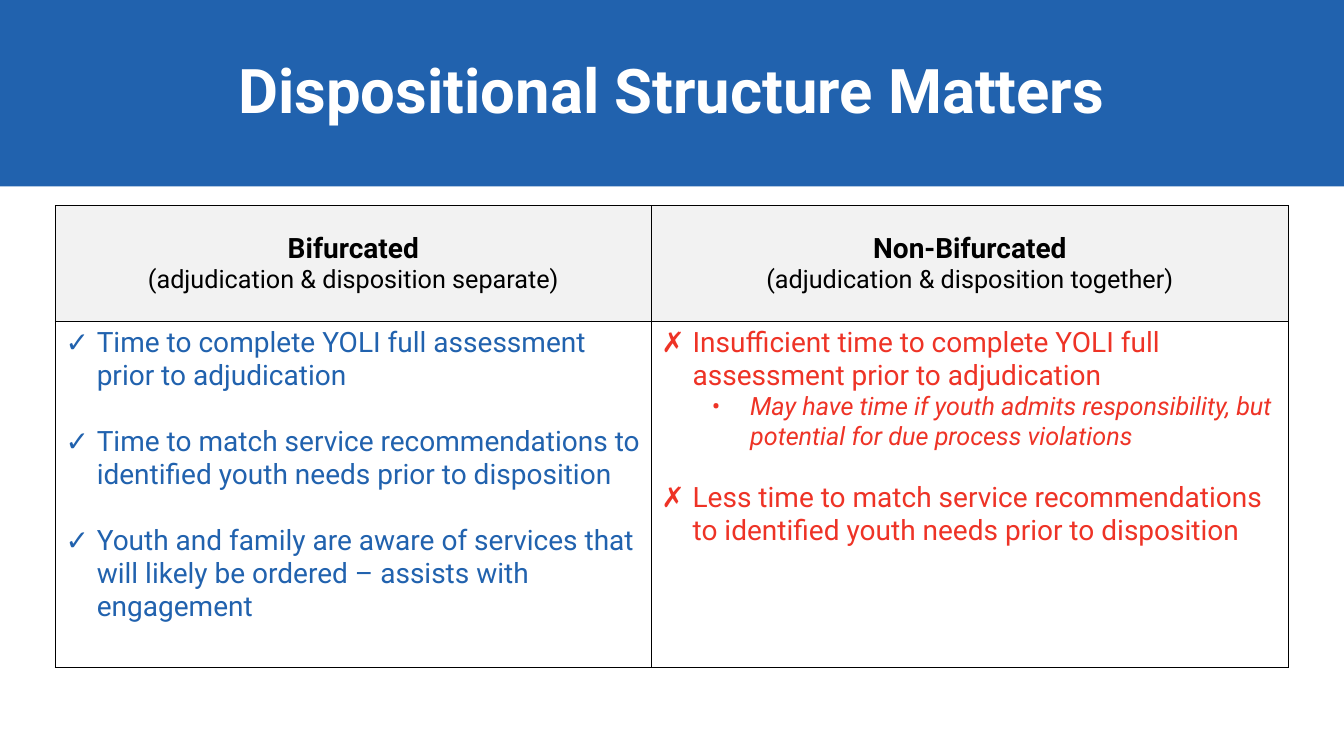
from dataclasses import dataclass

from lxml.etree import SubElement
from pptx import Presentation
from pptx.dml.color import RGBColor
from pptx.enum.shapes import MSO_SHAPE as Shape
from pptx.enum.text import MSO_ANCHOR as Anchor, PP_ALIGN as Align
from pptx.oxml.ns import qn
from pptx.util import Inches, Pt

BLUE, RED, BLACK, WHITE, GREY = "2162AE", "EE3326", "000000", "FFFFFF", "F2F2F2"
FONT = "Roboto"


@dataclass(frozen=True)
class Line:
    """One paragraph; a bullet makes it a hanging list item."""
    text: str
    size: int = 20
    bold: bool = False
    italic: bool = False
    bullet: str = ""
    indent: float = 0.31
    hanging: float = 0.31
    level: int = 0
    gap: float = 0


@dataclass(frozen=True)
class Column:
    width: float
    color: str
    heading: list[Line]
    points: list[Line]


COLUMNS = [
    Column(5.91, BLUE, [
        Line("Bifurcated", bold=True),
        Line("(adjudication & disposition separate)", 18),
    ], [
        Line("Time to complete YOLI full assessment prior to adjudication", bullet="✓"),
        Line("Time to match service recommendations to identified youth needs "
             "prior to disposition", bullet="✓", gap=23.5),
        Line("Youth and family are aware of services that will likely be ordered "
             "– assists with engagement", bullet="✓", gap=23.5),
    ]),
    Column(6.32, RED, [
        Line("Non-Bifurcated", bold=True),
        Line("(adjudication & disposition together)", 18),
    ], [
        Line("Insufficient time to complete YOLI full assessment prior to adjudication",
             bullet="✗"),
        Line("May have time if youth admits responsibility, but potential for due "
             "process violations", 18, italic=True, bullet="•",
             indent=0.88, hanging=0.38, level=1),
        Line("Less time to match service recommendations to identified youth needs "
             "prior to disposition", bullet="✗", gap=21.5),
    ]),
]
ROW_HEIGHTS = [1.15, 3.43]


def rgb(color: str) -> RGBColor:
    return RGBColor.from_string(color)


def write_lines(frame, lines: list[Line], color: str, align: Align) -> None:
    frame.word_wrap = True
    for index, line in enumerate(lines):
        paragraph = frame.add_paragraph() if index else frame.paragraphs[0]
        if line.bullet:
            props = paragraph._p.get_or_add_pPr()
            props.set("marL", str(Inches(line.indent)))
            props.set("indent", str(-Inches(line.hanging)))
            SubElement(props, qn("a:buFont"), typeface=FONT)
            SubElement(props, qn("a:buChar"), char=line.bullet)
        paragraph.alignment = align
        paragraph.level = line.level
        if line.gap:
            paragraph.space_before = Pt(line.gap)
        run = paragraph.add_run()
        run.text = line.text
        formats = {"name": FONT, "size": Pt(line.size),
                   "bold": line.bold, "italic": line.italic}
        for name, value in formats.items():
            setattr(run.font, name, value)
        run.font.color.rgb = rgb(color)


def add_borders(cell) -> None:
    props = cell._tc.get_or_add_tcPr()
    for side in ("lnL", "lnR", "lnT", "lnB"):
        border = SubElement(props, qn(f"a:{side}"), w=str(Pt(1)))
        fill = SubElement(border, qn("a:solidFill"))
        SubElement(fill, qn("a:srgbClr"), val=BLACK)


def add_banner(slide, title: str) -> None:
    banner = slide.shapes.add_shape(Shape.RECTANGLE, 0, 0, Inches(13.33), Inches(1.85))
    banner.shadow.inherit = False
    banner.fill.solid()
    banner.fill.fore_color.rgb = rgb(BLUE)
    banner.line.fill.background()
    banner.text_frame.vertical_anchor = Anchor.MIDDLE
    write_lines(banner.text_frame, [Line(title, 44, bold=True)], WHITE, Align.CENTER)
    banner.text_frame.paragraphs[0].line_spacing = 0.9


def add_comparison(slide, columns: list[Column]) -> None:
    width = sum(column.width for column in columns)
    comparison = slide.shapes.add_table(
        len(ROW_HEIGHTS), len(columns), Inches(0.55), Inches(2.04),
        Inches(width), Inches(sum(ROW_HEIGHTS))).table
    comparison.first_row = comparison.horz_banding = False
    for row, height in zip(comparison.rows, ROW_HEIGHTS):
        row.height = Inches(height)

    for index, column in enumerate(columns):
        comparison.columns[index].width = Inches(column.width)
        rows = [(column.heading, BLACK, GREY, Align.CENTER, Anchor.MIDDLE),
                (column.points, column.color, WHITE, Align.LEFT, Anchor.TOP)]
        for row, (lines, color, fill, align, anchor) in enumerate(rows):
            cell = comparison.cell(row, index)
            add_borders(cell)
            cell.fill.solid()
            cell.fill.fore_color.rgb = rgb(fill)
            cell.vertical_anchor = anchor
            write_lines(cell.text_frame, lines, color, align)


def main() -> None:
    deck = Presentation()
    deck.slide_width, deck.slide_height = Inches(13.33), Inches(7.5)
    slide = deck.slides.add_slide(deck.slide_layouts[6])

    # Title banner
    add_banner(slide, "Dispositional Structure Matters")

    # Two-column comparison
    add_comparison(slide, COLUMNS)

    deck.save("out.pptx")


if __name__ == "__main__":
    main()
